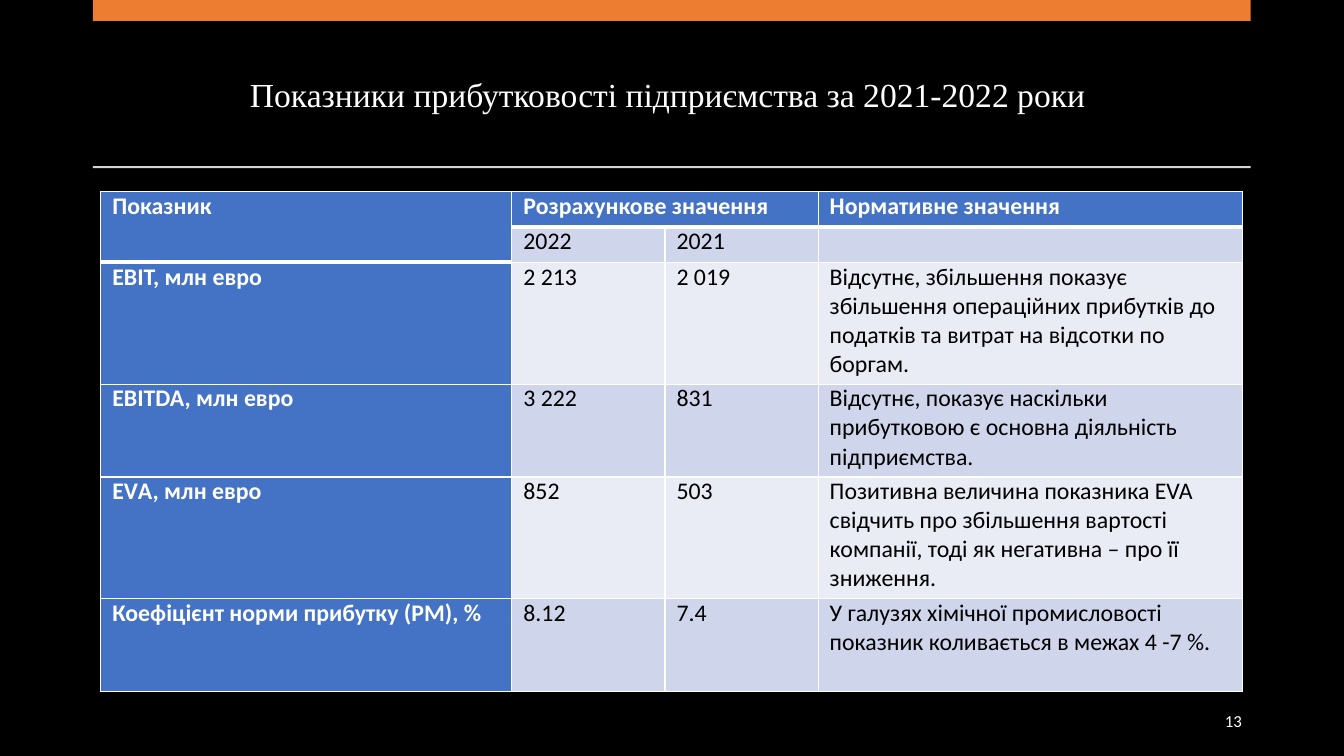
"""Build the slide with the company's profitability table for 2021-2022."""
from dataclasses import dataclass

from lxml import etree
from pptx import Presentation
from pptx.dml.color import RGBColor
from pptx.enum.shapes import MSO_SHAPE
from pptx.enum.text import MSO_ANCHOR, PP_ALIGN
from pptx.oxml.ns import qn
from pptx.util import Cm, Pt

RECTANGLE = MSO_SHAPE.RECTANGLE
MIDDLE = MSO_ANCHOR.MIDDLE
LEFT, CENTER, RIGHT = PP_ALIGN.LEFT, PP_ALIGN.CENTER, PP_ALIGN.RIGHT

BLACK, WHITE = "000000", "FFFFFF"
ORANGE, GREY, BLUE = "ED7D31", "D5D5D5", "4472C4"
BANDS = ("E9EBF5", "CFD5EA")

MARGIN, CONTENT_WIDTH = 2.34, 29.18
COLUMN_WIDTHS = (10.36, 3.86, 3.86, 10.69)
ROW_HEIGHTS = (0.89, 0.89, 3.07, 2.34, 3.07, 2.34)
THIN, THICK = 1, 3

ROWS = (
    ("Показник", "Розрахункове значення", "", "Нормативне значення"),
    ("", "2022", "2021", ""),
    ("EBIT, млн евро", "2 213", "2 019",
     "Відсутнє, збільшення показує збільшення операційних прибутків до "
     "податків та витрат на відсотки по боргам."),
    ("EBITDA, млн евро", "3 222", "831",
     "Відсутнє, показує наскільки прибутковою є основна діяльність підприємства."),
    ("EVА, млн евро", "852", "503",
     "Позитивна величина показника EVA свідчить про збільшення вартості "
     "компанії, тоді як негативна – про її зниження."),
    ("Коефіцієнт норми прибутку (PM), %", "8.12", "7.4",
     "У галузях хімічної промисловості показник коливається в межах 4 -7 %."),
)


@dataclass(frozen=True)
class Bar:
    """A plain band across the content width."""
    top: float
    height: float
    color: str


@dataclass(frozen=True)
class Label:
    """A text box with its place and format."""
    text: str
    left: float
    top: float
    width: float
    height: float
    size: float
    font: str
    align: PP_ALIGN
    spacing: float


BARS = (Bar(0, 0.53, ORANGE), Bar(4.19, 0.05, GREY))
LABELS = (
    Label("Показники прибутковості підприємства за 2021-2022 роки ",
          MARGIN, 0.94, CONTENT_WIDTH, 3, 24, "Times New Roman", CENTER, 0.9),
    Label("13", 23.93, 17.65, 7.62, 1.02, 12, "Calibri", RIGHT, 1),
)


def rgb(color: str) -> RGBColor:
    """Turn a hex string into a colour."""
    return RGBColor.from_string(color)


def paint(target, color: str) -> None:
    """Give a shape, cell or background a solid fill."""
    target.fill.solid()
    target.fill.fore_color.rgb = rgb(color)


def write(frame, text: str, *, size: float, font: str = "Calibri",
          color: str = WHITE, bold: bool = False, align: PP_ALIGN = LEFT,
          spacing: float = 1) -> None:
    """Put one formatted paragraph into a text frame."""
    para = frame.paragraphs[0]
    para.alignment = align
    para.line_spacing = spacing
    span = para.add_run()
    span.text = text
    span.font.size = Pt(size)
    span.font.name = font
    span.font.bold = bold
    span.font.color.rgb = rgb(color)


def add_bar(page, bar: Bar) -> None:
    """Draw a band without outline."""
    shape = page.shapes.add_shape(RECTANGLE, Cm(MARGIN), Cm(bar.top),
                                  Cm(CONTENT_WIDTH), Cm(bar.height))
    shape.shadow.inherit = False
    shape.line.fill.background()
    paint(shape, bar.color)


def add_label(page, label: Label) -> None:
    """Draw a text box centred vertically."""
    box = page.shapes.add_textbox(Cm(label.left), Cm(label.top),
                                  Cm(label.width), Cm(label.height))
    box.text_frame.word_wrap = True
    box.text_frame.vertical_anchor = MIDDLE
    write(box.text_frame, label.text, size=label.size, font=label.font,
          align=label.align, spacing=label.spacing)


def set_borders(cell, top: float, bottom: float) -> None:
    """Give a cell white borders, thin at the sides."""
    properties = cell._tc.get_or_add_tcPr()
    sides = (("a:lnL", THIN), ("a:lnR", THIN), ("a:lnT", top), ("a:lnB", bottom))
    for position, (tag, width) in enumerate(sides):
        line = etree.Element(qn(tag), w=str(Pt(width)))
        fill = etree.SubElement(line, qn("a:solidFill"))
        etree.SubElement(fill, qn("a:srgbClr"), val=WHITE)
        properties.insert(position, line)


def format_cell(cell, text: str, row: int, column: int) -> None:
    """Fill, frame and write one table cell."""
    heading = row == 0 or column == 0
    last_heading_row = 1 if column == 0 else 0
    cell.margin_left = cell.margin_right = Cm(0.29)
    cell.margin_top = cell.margin_bottom = 0
    paint(cell, BLUE if heading else BANDS[row % 2])
    set_borders(cell,
                top=THICK if row == last_heading_row + 1 else THIN,
                bottom=THICK if row <= last_heading_row else THIN)
    if text:
        write(cell.text_frame, text, size=17, bold=heading,
              color=WHITE if heading else BLACK)


def add_indicators(page) -> None:
    """Draw the table of indicators."""
    frame = page.shapes.add_table(len(ROWS), len(COLUMN_WIDTHS), Cm(2.54), Cm(4.83),
                                  Cm(sum(COLUMN_WIDTHS)), Cm(sum(ROW_HEIGHTS)))
    table = frame.table
    table.horz_banding = False
    for column, width in zip(table.columns, COLUMN_WIDTHS):
        column.width = Cm(width)
    for row, height in zip(table.rows, ROW_HEIGHTS):
        row.height = Cm(height)
    table.cell(0, 0).merge(table.cell(1, 0))
    table.cell(0, 1).merge(table.cell(0, 2))
    for row, texts in enumerate(ROWS):
        for column, text in enumerate(texts):
            format_cell(table.cell(row, column), text, row, column)


def main() -> None:
    """Assemble and save the deck."""
    deck = Presentation()
    deck.slide_width, deck.slide_height = Cm(33.87), Cm(19.05)
    page = deck.slides.add_slide(deck.slide_layouts[6])
    paint(page.background, BLACK)
    for bar in BARS:
        add_bar(page, bar)
    for label in LABELS:
        add_label(page, label)
    add_indicators(page)
    deck.save("out.pptx")


if __name__ == "__main__":
    main()
